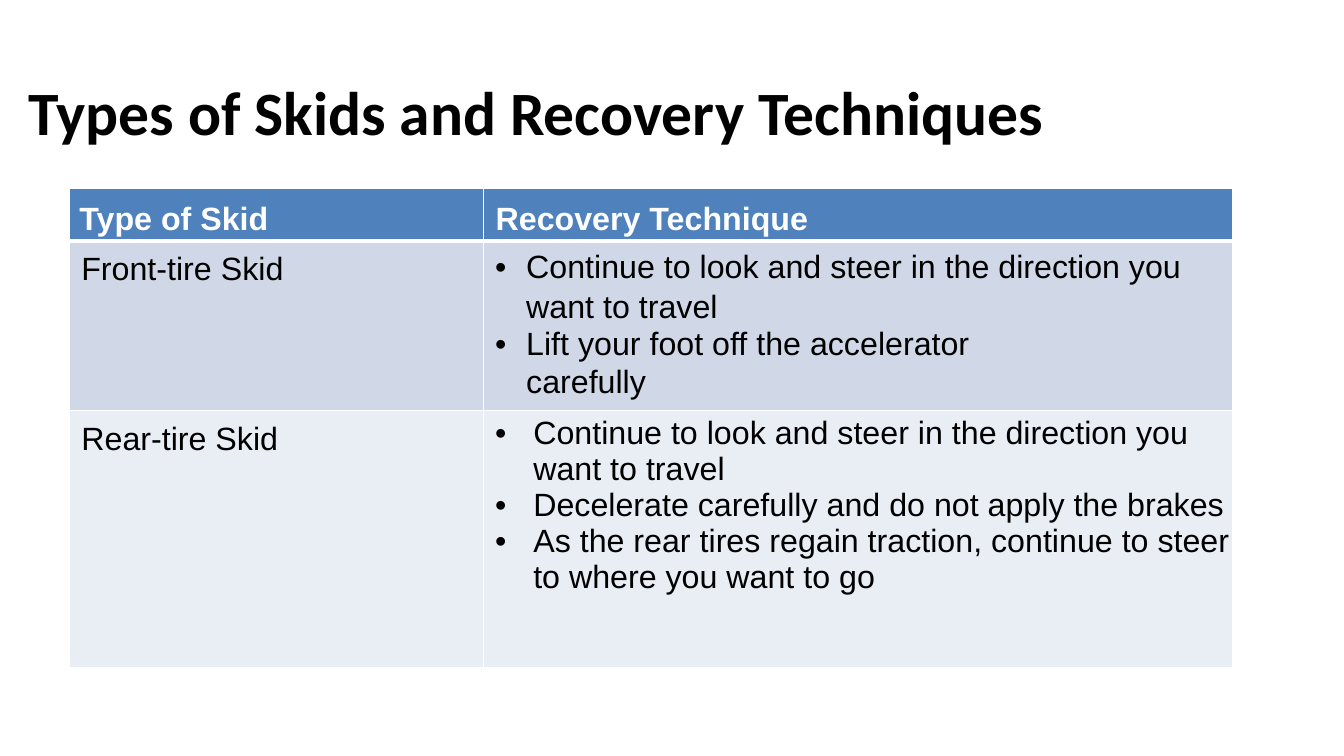
from lxml.etree import SubElement
from pptx import Presentation
from pptx.dml.color import RGBColor
from pptx.enum.text import MSO_ANCHOR
from pptx.oxml.ns import qn
from pptx.util import Cm, Pt

WHITE = RGBColor(0xFF, 0xFF, 0xFF)
BLACK = RGBColor(0, 0, 0)
BLUE = RGBColor(0x4F, 0x81, 0xBD)
MIST = RGBColor(0xD0, 0xD8, 0xE8)
PALE = RGBColor(0xE9, 0xED, 0xF4)


def write(para, text, size=23, font="Arial", color=BLACK, bold=False,
          left=0.3, hang=0, right=0, line=1.0, bullet=False):
    """Fill a paragraph; left, hang and right are in centimetres."""
    props = para._p.get_or_add_pPr()
    props.set("marL", str(Cm(left)))
    props.set("marR", str(Cm(right)))
    props.set("indent", str(-Cm(hang)))
    para.line_spacing = line
    if bullet:
        SubElement(props, qn("a:buFont"), typeface="Arial")
        SubElement(props, qn("a:buChar"), char="•")
    run = para.add_run()
    run.text = text
    run.font.size = Pt(size)
    run.font.name = font
    run.font.bold = bold
    run.font.color.rgb = color


class Deck:
    def __init__(self):
        self.file = Presentation()
        self.file.slide_width = Cm(33.87)
        self.file.slide_height = Cm(19.05)
        self.slide = self.file.slides.add_slide(self.file.slide_layouts[6])

    def title(self, text):
        box = self.slide.shapes.add_textbox(Cm(0.46), Cm(1.07), Cm(29.21), Cm(3.68))
        frame = box.text_frame
        frame.word_wrap = True
        frame.vertical_anchor = MSO_ANCHOR.MIDDLE
        write(frame.paragraphs[0], text, size=44, font="Calibri", bold=True,
              left=0, line=0.9)

    def edge(self, cell, **widths):
        """Draw white cell borders; widths are in points, keyed L, R, T, B."""
        props = cell._tc.get_or_add_tcPr()
        for side, width in widths.items():
            rule = SubElement(props, qn(f"a:ln{side}"), w=str(Pt(width)))
            fill = SubElement(rule, qn("a:solidFill"))
            SubElement(fill, qn("a:srgbClr"), val=str(WHITE))

    def cell(self, cell, items, fill, top, base):
        """Fill a cell with (text, format) pairs."""
        cell.margin_left = cell.margin_right = cell.margin_bottom = 0
        cell.margin_top = Cm(0.1)
        self.edge(cell, L=1, R=1, T=top, B=base)
        cell.fill.solid()
        cell.fill.fore_color.rgb = fill
        frame = cell.text_frame
        for i, (text, form) in enumerate(items):
            para = frame.add_paragraph() if i else frame.paragraphs[0]
            write(para, text, **form)

    def table(self, rows, wide, high):
        """Add a table; each row is a fill and its cells' items."""
        grid = self.slide.shapes.add_table(
            len(rows), len(wide), Cm(1.75), Cm(4.75),
            Cm(sum(wide)), Cm(sum(high))).table
        for col, width in zip(grid.columns, wide):
            col.width = Cm(width)
        for r, (fill, cells) in enumerate(rows):
            grid.rows[r].height = Cm(high[r])
            for c, items in enumerate(cells):
                self.cell(grid.cell(r, c), items, fill,
                          top=3 if r == 1 else 1, base=3 if r == 0 else 1)


def main():
    head = dict(color=WHITE, bold=True, line=1.24)
    label = dict(line=1.18)
    front = dict(left=1.07, hang=0.78, bullet=True)
    rear = dict(left=1.25, hang=0.96, bullet=True)
    look = "Continue to look and steer in the direction you want to travel"

    deck = Deck()
    deck.title("Types of Skids and Recovery Techniques")
    deck.table([
        (BLUE, [[("Type of Skid", dict(head, left=0.25))],
                [("Recovery Technique", head)]]),
        (MIST, [[("Front-tire Skid", label)],
                [(look, dict(front, line=1.11)),
                 ("Lift your foot off the accelerator carefully",
                  dict(front, line=1.04, right=4.8))]]),
        (PALE, [[("Rear-tire Skid", label)],
                [(look, rear),
                 ("Decelerate carefully and do not apply the brakes", rear),
                 ("As the rear tires regain traction, continue to steer "
                  "to where you want to go", rear)]]),
    ], wide=[10.44, 18.87], high=[1.32, 4.24, 6.48])
    deck.file.save("out.pptx")


if __name__ == "__main__":
    main()
